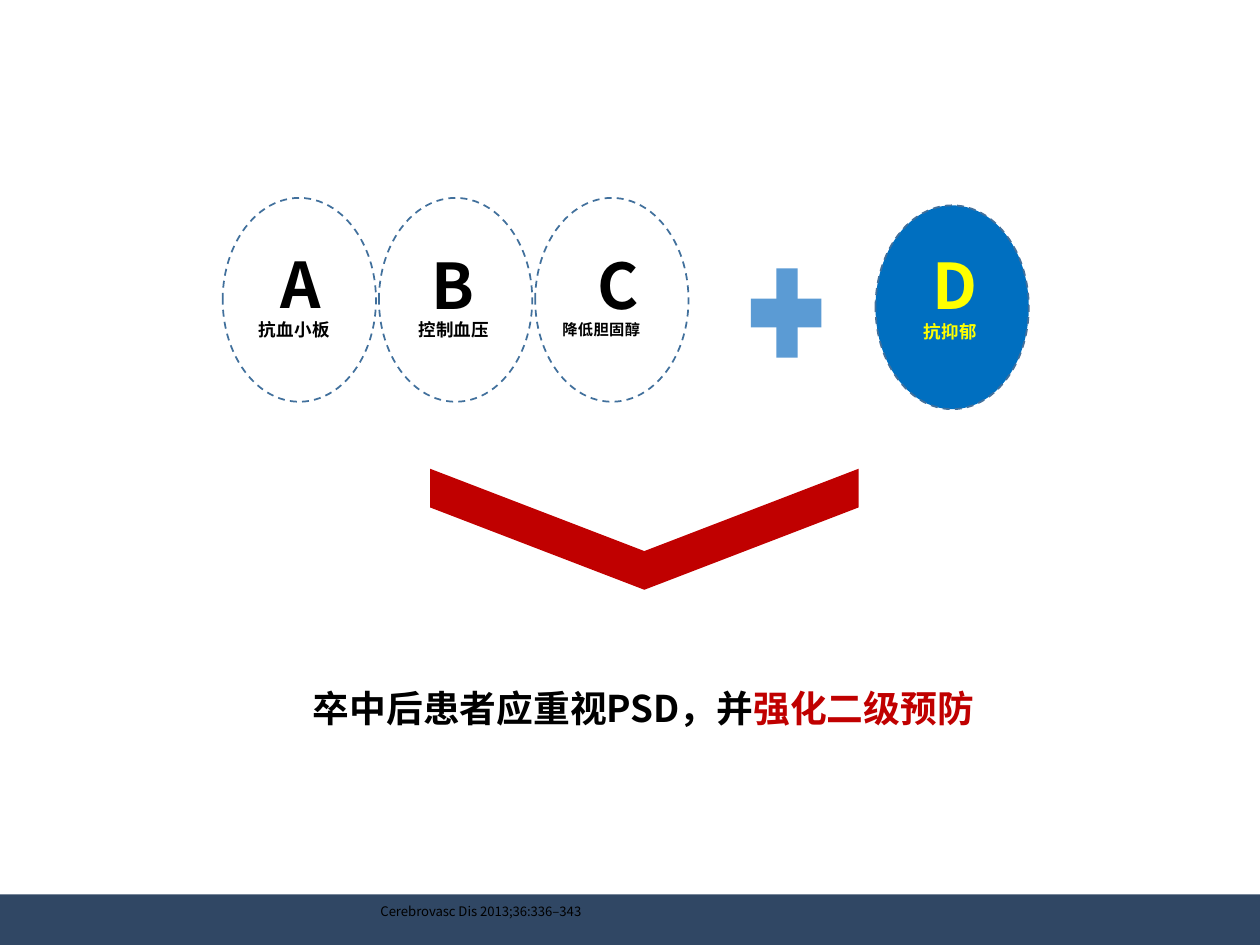
from lxml.etree import SubElement
from pptx import Presentation
from pptx.dml.color import RGBColor
from pptx.enum.dml import MSO_LINE
from pptx.enum.shapes import MSO_SHAPE
from pptx.enum.text import MSO_AUTO_SIZE, PP_ALIGN
from pptx.oxml.ns import qn
from pptx.util import Cm, Pt

FONT = "Noto Sans CJK SC"
BLACK, RED, YELLOW, BLUE = "000000", "C00000", "FFFF00", "006FC0"
NAVY, SKY, OUTLINE = "304764", "5B9BD4", "41709C"


def paint(sp, fill=None, line=None):
    """Set fill and dashed outline from hex strings; None means neither."""
    sp.shadow.inherit = False
    if fill:
        sp.fill.solid()
        sp.fill.fore_color.rgb = RGBColor.from_string(fill)
    else:
        sp.fill.background()
    if line:
        sp.line.color.rgb = RGBColor.from_string(line)
        sp.line.width = Pt(1)
        sp.line.dash_style = MSO_LINE.DASH
    else:
        sp.line.fill.background()


def add_run(p, text, size, color=BLACK, bold=True, spacing=0, baseline=0):
    """Spacing is in points, baseline in percent."""
    r = p.add_run()
    r.text = text
    r.font.size = Pt(size)
    r.font.bold = bold
    r.font.name = FONT
    r.font.color.rgb = RGBColor.from_string(color)
    rPr = r.font._element
    SubElement(rPr, qn("a:ea")).set("typeface", FONT)
    if spacing:
        rPr.set("spc", str(round(spacing * 100)))
    if baseline:
        rPr.set("baseline", str(baseline * 1000))


prs = Presentation()
prs.slide_width, prs.slide_height = Cm(25.4), Cm(19.05)
slide = prs.slides.add_slide(prs.slide_layouts[6])
shapes = slide.shapes

# Footer bar
bar = shapes.add_shape(MSO_SHAPE.RECTANGLE, 0, Cm(18.03), prs.slide_width, Cm(1.02))
paint(bar, NAVY)

# Circles A, B, C and D
circles = [(4.49 + 3.15 * i, 3.99, None) for i in range(3)] + [(17.65, 4.14, BLUE)]
for left, top, fill in circles:
    sp = shapes.add_shape(MSO_SHAPE.OVAL, Cm(left), Cm(top), Cm(3.09), Cm(4.11))
    paint(sp, fill, OUTLINE)

# Plus sign
for at in [(15.65, 5.41, 0.43, 1.8), (15.14, 6.02, 1.42, 0.58)]:
    paint(shapes.add_shape(MSO_SHAPE.RECTANGLE, *map(Cm, at)), SKY)

# Chevron pointing down
chevron = [(8.67, 9.45), (8.67, 10.23), (12.99, 11.89),
           (17.31, 10.23), (17.31, 9.45), (12.99, 11.11)]
points = [(Cm(x), Cm(y)) for x, y in chevron]
fb = shapes.build_freeform(*points[0])
fb.add_line_segments(points[1:])
paint(fb.convert_to_shape(), RED)

# Each box: place, then paragraphs as (indent, line spacing, tab stop, runs)
letter = dict(size=36, spacing=-0.1)
label = dict(size=10, spacing=0.2)
headline = dict(size=21)
text_boxes = [
    ((6.28, 13.82, 13.44, 0.89), None, [
        (0.03, None, None, [
            ("卒中后患者应重视", headline),
            ("PSD", headline | dict(spacing=-0.1)),
            ("，并", headline),
            ("强化二级预防", headline | dict(color=RED)),
        ])]),
    ((5.18, 5, 1.5, 1.88), PP_ALIGN.CENTER, [
        (0.28, 42, None, [("A", letter)]),
        (0, 10.8, None, [("抗血小板", label)])]),
    ((8.28, 5, 4.78, 1.88), PP_ALIGN.CENTER, [
        (0.25, 42.4, 3.35, [("B\t", letter), ("C", dict(size=36))]),
        (0, 11.2, 2.9, [
            ("控制血压\t", label),
            ("降低胆固醇", dict(size=15, spacing=0.3, baseline=3)),
        ])]),
    ((18.51, 5, 1.3, 1.88), PP_ALIGN.CENTER, [
        (0.2, 42.4, None, [("D", letter | dict(color=YELLOW))]),
        (0, 11.2, None, [("抗抑郁", label | dict(color=YELLOW))])]),
    ((7.64, 18.21, 4.3, 0.33), None, [
        (0.03, None, None, [
            ("Cerebrovasc Dis 2013;36:336–343",
             dict(size=7.5, bold=False, spacing=-0.05)),
        ])]),
]
for at, align, paragraphs in text_boxes:
    tf = shapes.add_textbox(*map(Cm, at)).text_frame
    tf.word_wrap = True
    tf.auto_size = MSO_AUTO_SIZE.SHAPE_TO_FIT_TEXT
    tf.margin_left = tf.margin_right = tf.margin_top = tf.margin_bottom = 0
    for i, (indent, line_spacing, tab, runs) in enumerate(paragraphs):
        p = tf.add_paragraph() if i else tf.paragraphs[0]
        p.alignment = align
        if line_spacing:
            p.line_spacing = Pt(line_spacing)
        pPr = p._p.get_or_add_pPr()
        pPr.set("marL", str(Cm(indent)))
        if tab:
            stop = SubElement(SubElement(pPr, qn("a:tabLst")), qn("a:tab"))
            stop.set("pos", str(Cm(tab)))
            stop.set("algn", "l")
        for text, style in runs:
            add_run(p, text, **style)

prs.save("out.pptx")
